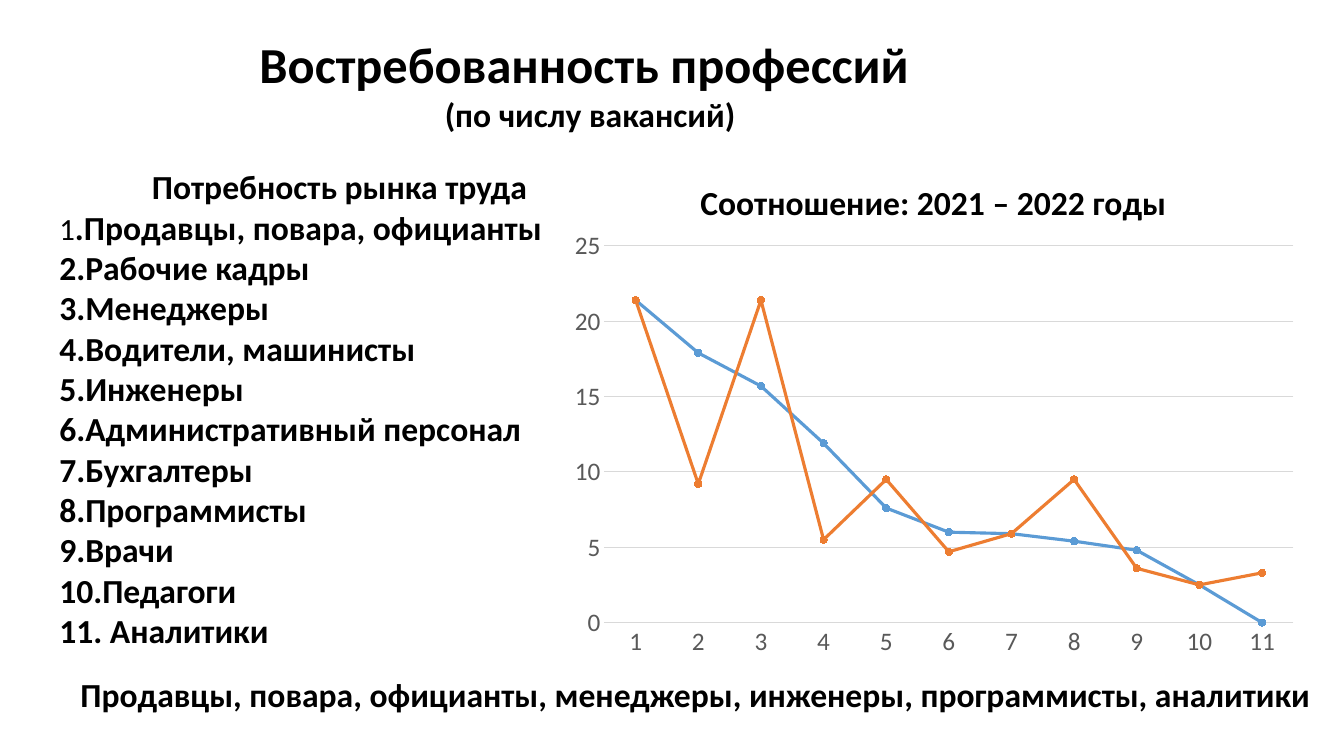
from pptx import Presentation
from pptx.chart.data import CategoryChartData
from pptx.dml.color import RGBColor
from pptx.enum.chart import XL_CHART_TYPE, XL_MARKER_STYLE, XL_TICK_MARK
from pptx.enum.text import MSO_AUTO_SIZE, PP_ALIGN
from pptx.oxml import parse_xml
from pptx.oxml.ns import nsdecls
from pptx.util import Pt

FONT = "Calibri"
BLACK, GREY, GRID = "000000", "595959", "D9D9D9"
HEADING = {"size": Pt(36), "bold": True}
STRONG = {"size": Pt(24), "bold": True}
PLAIN = {"size": Pt(22), "bold": False}

PROFESSIONS = [
    "2.Рабочие кадры", "3.Менеджеры", "4.Водители, машинисты", "5.Инженеры",
    "6.Административный персонал", "7.Бухгалтеры", "8.Программисты",
    "9.Врачи", "10.Педагоги", "11. Аналитики",
]
SERIES = [
    ("Series 1", "5B9BD5", (21.4, 17.9, 15.7, 11.9, 7.6, 6, 5.9, 5.4, 4.8, 2.5, 0)),
    ("Series 2", "ED7D31", (21.4, 9.2, 21.4, 5.5, 9.5, 4.7, 5.9, 9.5, 3.6, 2.5, 3.3)),
]


def color(value):
    return RGBColor.from_string(value)


def style_font(font, values, font_color=BLACK):
    font.name = FONT
    font.color.rgb = color(font_color)
    for name, value in values.items():
        setattr(font, name, value)


def style_line(line, line_color, width):
    line.color.rgb = color(line_color)
    line.width = Pt(width)


def add_text(slide, box, paragraphs, margin=None, fill=None):
    """Each paragraph is a pair: alignment and a list of (text, font values)."""
    shape = slide.shapes.add_textbox(*map(Pt, box))
    if fill:
        shape.fill.solid()
        shape.fill.fore_color.rgb = color(fill)
    frame = shape.text_frame
    frame.word_wrap = True
    frame.auto_size = MSO_AUTO_SIZE.SHAPE_TO_FIT_TEXT
    if margin is not None:
        for side in ("left", "top", "right", "bottom"):
            setattr(frame, f"margin_{side}", Pt(margin))
    for index, (alignment, runs) in enumerate(paragraphs):
        paragraph = frame.add_paragraph() if index else frame.paragraphs[0]
        paragraph.alignment = alignment
        for text, values in runs:
            run = paragraph.add_run()
            run.text = text
            style_font(run.font, values)


def set_layout(element, target, **fractions):
    """Place a chart part by fractions of the chart's size."""
    for layout in element.findall("{*}layout"):
        element.remove(layout)
    inner = '<c:layoutTarget val="inner"/>' if target == "inner" else ""
    modes = "".join(f'<c:{key}Mode val="edge"/>' for key in ("x", "y"))
    values = "".join(f'<c:{key} val="{value}"/>' for key, value in fractions.items())
    layout = parse_xml(
        f"<c:layout {nsdecls('c')}><c:manualLayout>{inner}{modes}{values}"
        "</c:manualLayout></c:layout>"
    )
    element.insert(1 if target == "title" else 0, layout)


def style_axis(axis):
    axis.major_tick_mark = XL_TICK_MARK.NONE
    axis.minor_tick_mark = XL_TICK_MARK.NONE
    style_font(axis.tick_labels.font, {"size": Pt(18)}, GREY)


def add_line_chart(slide, box, title):
    data = CategoryChartData()
    data.categories = [str(number) for number in range(1, 12)]
    for name, _, values in SERIES:
        data.add_series(name, values)
    chart = slide.shapes.add_chart(
        XL_CHART_TYPE.LINE_MARKERS, *map(Pt, box), data
    ).chart
    style_font(chart.font, {"size": Pt(10)})
    chart.has_legend = False
    chart.has_title = True
    paragraph = chart.chart_title.text_frame.paragraphs[0]
    run = paragraph.add_run()
    run.text = title
    style_font(run.font, STRONG)
    chart.chart_title.include_in_layout = False

    style_axis(chart.category_axis)
    style_line(chart.category_axis.format.line, GRID, 0.75)
    value_axis = chart.value_axis
    style_axis(value_axis)
    value_axis.format.line.fill.background()
    style_line(value_axis.major_gridlines.format.line, GRID, 0.75)
    for name, value in {"minimum_scale": 0, "maximum_scale": 25, "major_unit": 5}.items():
        setattr(value_axis, name, value)

    plot = chart.plots[0]
    plot.vary_by_categories = False
    for series, (_, series_color, _) in zip(plot.series, SERIES):
        series.smooth = False
        style_line(series.format.line, series_color, 2.25)
        marker = series.marker
        marker.style = XL_MARKER_STYLE.CIRCLE
        marker.size = 5
        marker.format.fill.solid()
        marker.format.fill.fore_color.rgb = color(series_color)
        style_line(marker.format.line, series_color, 0.75)

    set_layout(chart.chart_title._element, "title", x=0.18, y=0.04)
    plot_area = chart._chartSpace.chart.plotArea
    set_layout(plot_area, "inner", x=0.06, y=0.18, w=0.92, h=0.73)


def main():
    presentation = Presentation()
    presentation.slide_width, presentation.slide_height = Pt(960), Pt(540)
    slide = presentation.slides.add_slide(presentation.slide_layouts[6])
    center, justify = PP_ALIGN.CENTER, PP_ALIGN.JUSTIFY

    add_text(slide, (54, 18.7, 735, 82.8), [
        (center, [("Востребованность профессий ", HEADING)]),
        (center, [("(по числу вакансий)", STRONG)]),
    ], margin=5, fill="FFFFFF")
    add_text(slide, (35.3, 115.2, 409, 356.4), [
        (center, [(" Потребность рынка труда", STRONG)]),
        (justify, [("1", PLAIN), (".Продавцы, повара, официанты", STRONG)]),
        *((justify, [(profession, STRONG)]) for profession in PROFESSIONS),
    ])
    add_text(slide, (47.5, 478, 898.6, 36), [
        (center, [("Продавцы, повара, официанты, менеджеры, инженеры, "
                   "программисты, аналитики", STRONG)]),
    ])
    add_line_chart(slide, (399.6, 109.4, 535, 368.6), "Соотношение: 2021 – 2022 годы")
    presentation.save("out.pptx")


if __name__ == "__main__":
    main()
